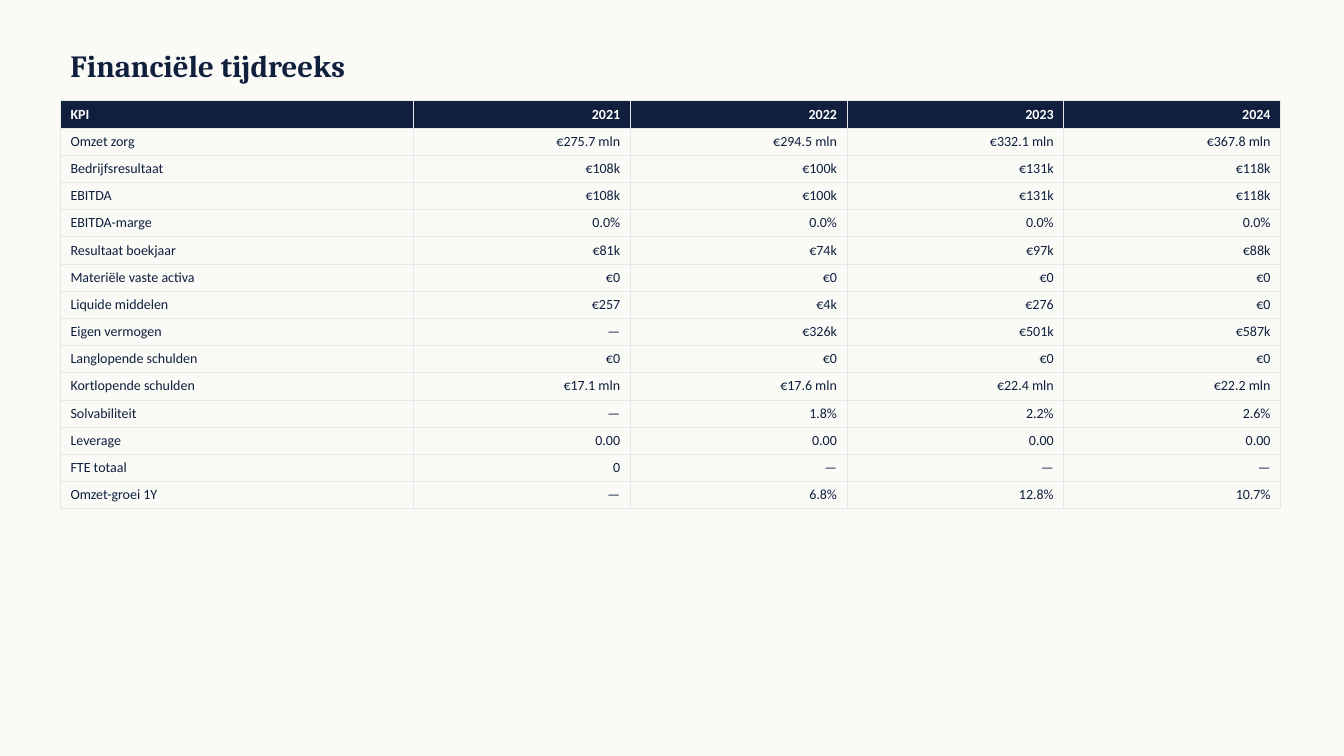
from lxml import etree
from pptx import Presentation
from pptx.dml.color import RGBColor
from pptx.enum.text import MSO_ANCHOR, PP_ALIGN
from pptx.oxml.ns import qn
from pptx.util import Pt

MIDDLE = MSO_ANCHOR.MIDDLE
LEFT, RIGHT = PP_ALIGN.LEFT, PP_ALIGN.RIGHT

TITLE = "Financiële tijdreeks"
ROWS = [
    ("KPI", "2021", "2022", "2023", "2024"),
    ("Omzet zorg", "€275.7 mln", "€294.5 mln", "€332.1 mln", "€367.8 mln"),
    ("Bedrijfsresultaat", "€108k", "€100k", "€131k", "€118k"),
    ("EBITDA", "€108k", "€100k", "€131k", "€118k"),
    ("EBITDA-marge", "0.0%", "0.0%", "0.0%", "0.0%"),
    ("Resultaat boekjaar", "€81k", "€74k", "€97k", "€88k"),
    ("Materiële vaste activa", "€0", "€0", "€0", "€0"),
    ("Liquide middelen", "€257", "€4k", "€276", "€0"),
    ("Eigen vermogen", "—", "€326k", "€501k", "€587k"),
    ("Langlopende schulden", "€0", "€0", "€0", "€0"),
    ("Kortlopende schulden", "€17.1 mln", "€17.6 mln", "€22.4 mln", "€22.2 mln"),
    ("Solvabiliteit", "—", "1.8%", "2.2%", "2.6%"),
    ("Leverage", "0.00", "0.00", "0.00", "0.00"),
    ("FTE totaal", "0", "—", "—", "—"),
    ("Omzet-groei 1Y", "—", "6.8%", "12.8%", "10.7%"),
]

NAVY, WHITE, PAPER, GRID = "0F1F3D", "FFFFFF", "FAFAF7", "E5E7EB"
HEADING_FONT, BODY_FONT = "Cambria", "Calibri"

EMU_PER_PX = 9144  # 100 px to the inch
SLIDE_WIDTH, SLIDE_HEIGHT = 1333, 750
MARGIN = 60
TITLE_TOP, TITLE_WIDTH, TITLE_HEIGHT = 40, 1200, 50
TABLE_TOP, ROW_HEIGHT = 100, 27
COLUMN_WIDTHS = [350] + [215] * 4


def px(length):
    return length * EMU_PER_PX


def color(hex_value):
    return RGBColor.from_string(hex_value)


def write(text_frame, text, font_name, size, hex_value, bold, alignment=LEFT):
    paragraph = text_frame.paragraphs[0]
    paragraph.text = text
    paragraph.alignment = alignment
    font = paragraph.runs[0].font
    font.name = font_name
    font.size = Pt(size)
    font.bold = bold
    font.color.rgb = color(hex_value)


def add_borders(cell, hex_value, width):
    """Draw a thin line on all four sides; lines must precede the cell fill."""
    properties = cell._tc.get_or_add_tcPr()
    for index, side in enumerate(("a:lnL", "a:lnR", "a:lnT", "a:lnB")):
        line = etree.Element(qn(side), w=str(Pt(width)))
        fill = etree.SubElement(line, qn("a:solidFill"))
        etree.SubElement(fill, qn("a:srgbClr"), val=hex_value)
        properties.insert(index, line)


def add_title(slide):
    box = slide.shapes.add_textbox(
        px(MARGIN), px(TITLE_TOP), px(TITLE_WIDTH), px(TITLE_HEIGHT))
    box.text_frame.word_wrap = True
    box.text_frame.vertical_anchor = MIDDLE
    write(box.text_frame, TITLE, HEADING_FONT, 22, NAVY, True)


def add_kpi_table(slide):
    table = slide.shapes.add_table(
        len(ROWS), len(COLUMN_WIDTHS), px(MARGIN), px(TABLE_TOP),
        px(sum(COLUMN_WIDTHS)), px(ROW_HEIGHT * len(ROWS))).table
    table.horz_banding = False
    for column, width in zip(table.columns, COLUMN_WIDTHS):
        column.width = px(width)
    for row_index, values in enumerate(ROWS):
        is_header = row_index == 0
        for column_index, value in enumerate(values):
            cell = table.cell(row_index, column_index)
            if is_header:
                cell.fill.solid()
                cell.fill.fore_color.rgb = color(NAVY)
            else:
                cell.fill.background()
            add_borders(cell, GRID, 0.5)
            write(cell.text_frame, value, BODY_FONT, 10,
                  WHITE if is_header else NAVY, is_header,
                  RIGHT if column_index else LEFT)


def main():
    presentation = Presentation()
    presentation.slide_width = px(SLIDE_WIDTH)
    presentation.slide_height = px(SLIDE_HEIGHT)
    slide = presentation.slides.add_slide(presentation.slide_layouts[6])
    slide.background.fill.solid()
    slide.background.fill.fore_color.rgb = color(PAPER)
    add_title(slide)
    add_kpi_table(slide)
    presentation.save("out.pptx")


if __name__ == "__main__":
    main()
